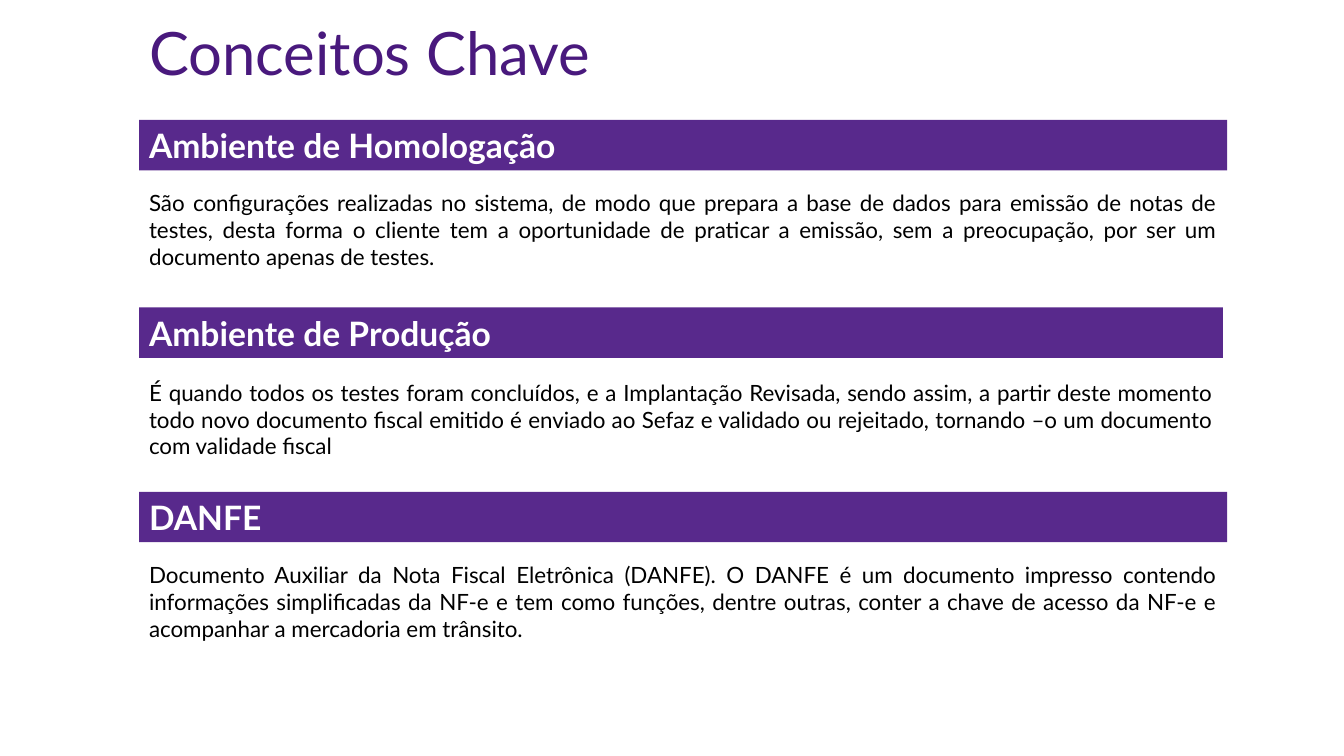
from dataclasses import dataclass

from pptx import Presentation
from pptx.dml.color import RGBColor
from pptx.enum.shapes import MSO_SHAPE
from pptx.enum.text import MSO_ANCHOR, MSO_AUTO_SIZE, PP_ALIGN
from pptx.slide import Slide
from pptx.text.text import TextFrame
from pptx.util import Emu, Pt

RECTANGLE = MSO_SHAPE.RECTANGLE
TOP, MIDDLE = MSO_ANCHOR.TOP, MSO_ANCHOR.MIDDLE
LEFT_ALIGN, JUSTIFY = PP_ALIGN.LEFT, PP_ALIGN.JUSTIFY
NO_AUTO_SIZE = MSO_AUTO_SIZE.NONE

COLORS = {
    "title": "49197D",
    "band": "58298C",
    "heading": "FFFFFF",
    "body": "000000",
}
FONT = "Lato"
EMU_PER_PX = 9144  # 100 px to the inch
LEFT = 138
BAND_HEIGHT = 50
TITLE_ONLY_LAYOUT = 5


@dataclass(frozen=True)
class Concept:
    heading: str
    body: str
    top: int
    body_top: int
    width: int
    body_height: int


CONCEPTS = [
    Concept(
        "Ambiente de Homologação",
        "São configurações realizadas no sistema, de modo que prepara a base de "
        "dados para emissão de notas de testes, desta forma o cliente tem a "
        "oportunidade de praticar a emissão, sem a preocupação, por ser um "
        "documento apenas de testes.",
        top=119, body_top=183, width=1079, body_height=64,
    ),
    Concept(
        "Ambiente de Produção",
        "É quando todos os testes foram concluídos, e a Implantação Revisada, "
        "sendo assim, a partir deste momento todo novo documento fiscal emitido "
        "é enviado ao Sefaz e validado ou rejeitado, tornando –o um documento "
        "com validade fiscal",
        top=305, body_top=371, width=1075, body_height=64,
    ),
    Concept(
        "DANFE",
        "Documento Auxiliar da Nota Fiscal Eletrônica (DANFE). O DANFE é um "
        "documento impresso contendo informações simplificadas da NF-e e tem "
        "como funções, dentre outras, conter a chave de acesso da NF-e e "
        "acompanhar a mercadoria em trânsito.",
        top=488, body_top=552, width=1079, body_height=91,
    ),
]


def px(length: int) -> Emu:
    return Emu(length * EMU_PER_PX)


def write_text(
    frame: TextFrame,
    text: str,
    *,
    size: float,
    color: str,
    bold: bool = False,
    align: PP_ALIGN = LEFT_ALIGN,
    anchor: MSO_ANCHOR = TOP,
) -> None:
    frame.word_wrap = True
    frame.auto_size = NO_AUTO_SIZE
    frame.vertical_anchor = anchor
    paragraph = frame.paragraphs[0]
    paragraph.alignment = align
    run = paragraph.add_run()
    run.text = text
    run.font.name = FONT
    run.font.size = Pt(size)
    run.font.bold = bold
    run.font.color.rgb = RGBColor.from_string(COLORS[color])


def add_title(slide: Slide, text: str) -> None:
    title = slide.shapes.title
    title.left, title.top = px(LEFT), px(11)
    title.width, title.height = px(1130), px(95)
    write_text(title.text_frame, text, size=42.7, color="title")


def add_concept(slide: Slide, concept: Concept) -> None:
    """Draw a heading band and the justified paragraph below it."""
    band = slide.shapes.add_shape(
        RECTANGLE, px(LEFT), px(concept.top), px(concept.width), px(BAND_HEIGHT)
    )
    band.shadow.inherit = False
    band.fill.solid()
    band.fill.fore_color.rgb = RGBColor.from_string(COLORS["band"])
    band.line.fill.background()
    write_text(band.text_frame, concept.heading, size=24, color="heading",
               bold=True, anchor=MIDDLE)

    body = slide.shapes.add_textbox(
        px(LEFT), px(concept.body_top), px(concept.width), px(concept.body_height)
    )
    write_text(body.text_frame, concept.body, size=16, color="body", align=JUSTIFY)


def main() -> None:
    presentation = Presentation()
    presentation.slide_width, presentation.slide_height = px(1333), px(750)
    slide = presentation.slides.add_slide(
        presentation.slide_layouts[TITLE_ONLY_LAYOUT]
    )
    add_title(slide, "Conceitos Chave")
    for concept in CONCEPTS:
        add_concept(slide, concept)
    presentation.save("out.pptx")


if __name__ == "__main__":
    main()
